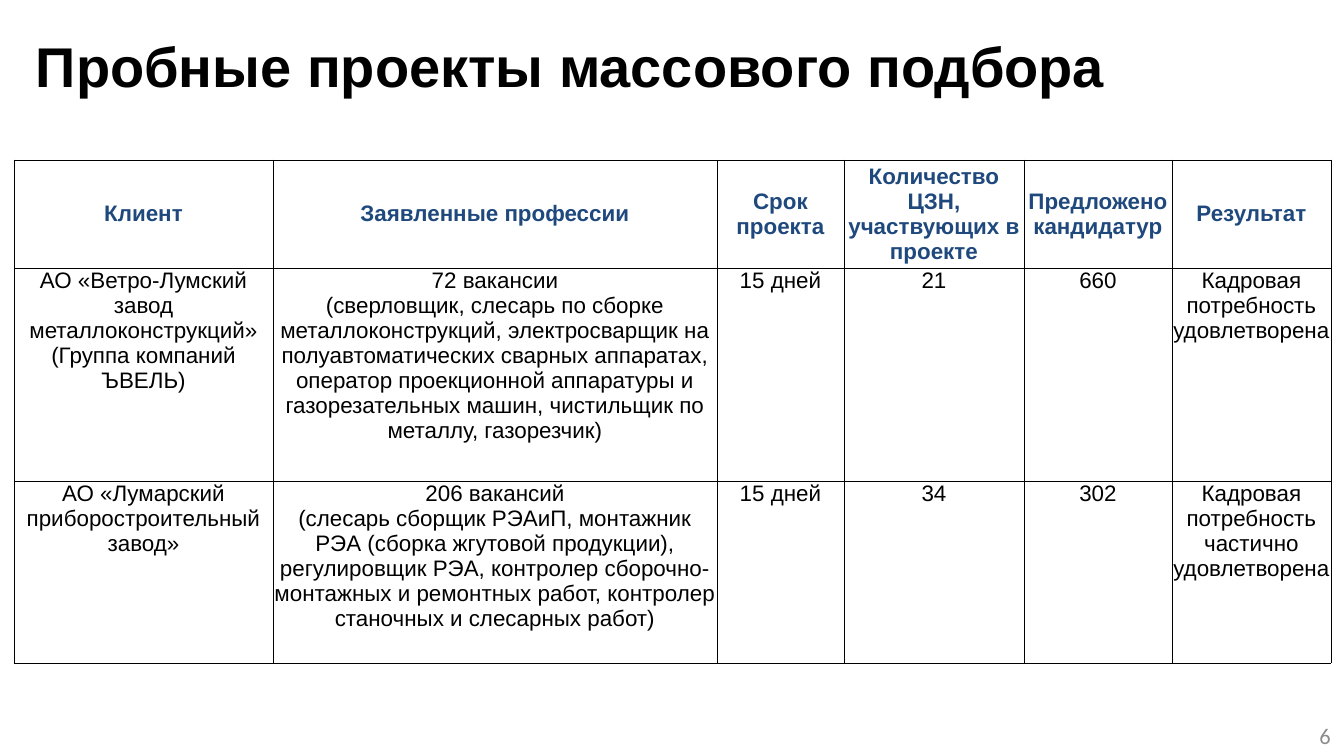
from lxml import etree
from pptx import Presentation
from pptx.dml.color import RGBColor
from pptx.enum.text import MSO_ANCHOR, PP_ALIGN
from pptx.oxml.ns import qn
from pptx.util import Pt

CENTER, RIGHT = PP_ALIGN.CENTER, PP_ALIGN.RIGHT
TOP, MIDDLE = MSO_ANCHOR.TOP, MSO_ANCHOR.MIDDLE

EMU_PER_PX = 6804
BORDER_WIDTH = Pt(0.5)
COLORS = {
    "text": "000000",
    "header": "1F497D",
    "border": "000000",
    "cell": "FFFFFF",
    "page_number": "8C8C8C",
}

COLUMN_WIDTHS = [259, 444, 127, 180, 148, 159]
ROW_HEIGHTS = [108, 213, 182]
PROJECTS = [
    ["Клиент", "Заявленные профессии", "Срок проекта",
     "Количество ЦЗН, участвующих в проекте", "Предложено кандидатур",
     "Результат"],
    ["АО «Ветро-Лумский завод металлоконструкций» (Группа компаний ЪВЕЛЬ)",
     "72 вакансии\n(сверловщик, слесарь по сборке металлоконструкций, "
     "электросварщик на полуавтоматических сварных аппаратах, оператор "
     "проекционной аппаратуры и газорезательных машин, чистильщик по "
     "металлу, газорезчик)",
     "15 дней", "21", "660", "Кадровая потребность удовлетворена"],
    ["АО «Лумарский приборостроительный завод»",
     "206 вакансий\n(слесарь сборщик РЭАиП, монтажник РЭА (сборка жгутовой "
     "продукции), регулировщик РЭА, контролер сборочно-монтажных и ремонтных "
     "работ, контролер станочных и слесарных работ)",
     "15 дней", "34", "302", "Кадровая потребность частично удовлетворена"],
]


def px(length):
    return length * EMU_PER_PX


def style_paragraphs(frame, size, color, align=CENTER, bold=False, font="Arial"):
    for paragraph in frame.paragraphs:
        paragraph.alignment = align
        paragraph.font.name = font
        paragraph.font.size = Pt(size)
        paragraph.font.bold = bold
        paragraph.font.color.rgb = RGBColor.from_string(COLORS[color])


def add_label(slide, box, text, **style):
    frame = slide.shapes.add_textbox(*map(px, box)).text_frame
    frame.word_wrap = True
    frame.vertical_anchor = MIDDLE
    frame.text = text
    style_paragraphs(frame, **style)


def add_borders(cell):
    properties = cell._tc.get_or_add_tcPr()
    for side in ("a:lnL", "a:lnR", "a:lnT", "a:lnB"):
        line = etree.SubElement(properties, qn(side), w=str(BORDER_WIDTH))
        fill = etree.SubElement(line, qn("a:solidFill"))
        etree.SubElement(fill, qn("a:srgbClr"), val=COLORS["border"])


def fill_cell(cell, text, is_header):
    cell.margin_left = cell.margin_right = 0
    cell.margin_top = cell.margin_bottom = 0
    cell.vertical_anchor = MIDDLE if is_header else TOP
    cell.text = text
    style_paragraphs(cell.text_frame, size=12, bold=is_header,
                     color="header" if is_header else "text")
    add_borders(cell)
    cell.fill.solid()
    cell.fill.fore_color.rgb = RGBColor.from_string(COLORS["cell"])


def add_projects_table(slide, left, top):
    table = slide.shapes.add_table(
        len(ROW_HEIGHTS), len(COLUMN_WIDTHS), px(left), px(top),
        px(sum(COLUMN_WIDTHS)), px(sum(ROW_HEIGHTS))).table
    table.horz_banding = False
    for column, width in zip(table.columns, COLUMN_WIDTHS):
        column.width = px(width)
    for row_index, (row, height) in enumerate(zip(table.rows, ROW_HEIGHTS)):
        row.height = px(height)
        for cell, text in zip(row.cells, PROJECTS[row_index]):
            fill_cell(cell, text, is_header=row_index == 0)


def build_projects_slide(presentation):
    slide = presentation.slides.add_slide(presentation.slide_layouts[6])
    add_label(slide, (15, 15, 1111, 101), "Пробные проекты массового подбора",
              size=30, color="text", bold=True)
    add_projects_table(slide, 14, 160)
    add_label(slide, (1032, 716, 312, 40), "6", size=12, color="page_number",
              align=RIGHT, font="Calibri")


def main():
    presentation = Presentation()
    presentation.slide_width = px(1344)
    presentation.slide_height = px(756)
    build_projects_slide(presentation)
    presentation.save("out.pptx")


if __name__ == "__main__":
    main()
